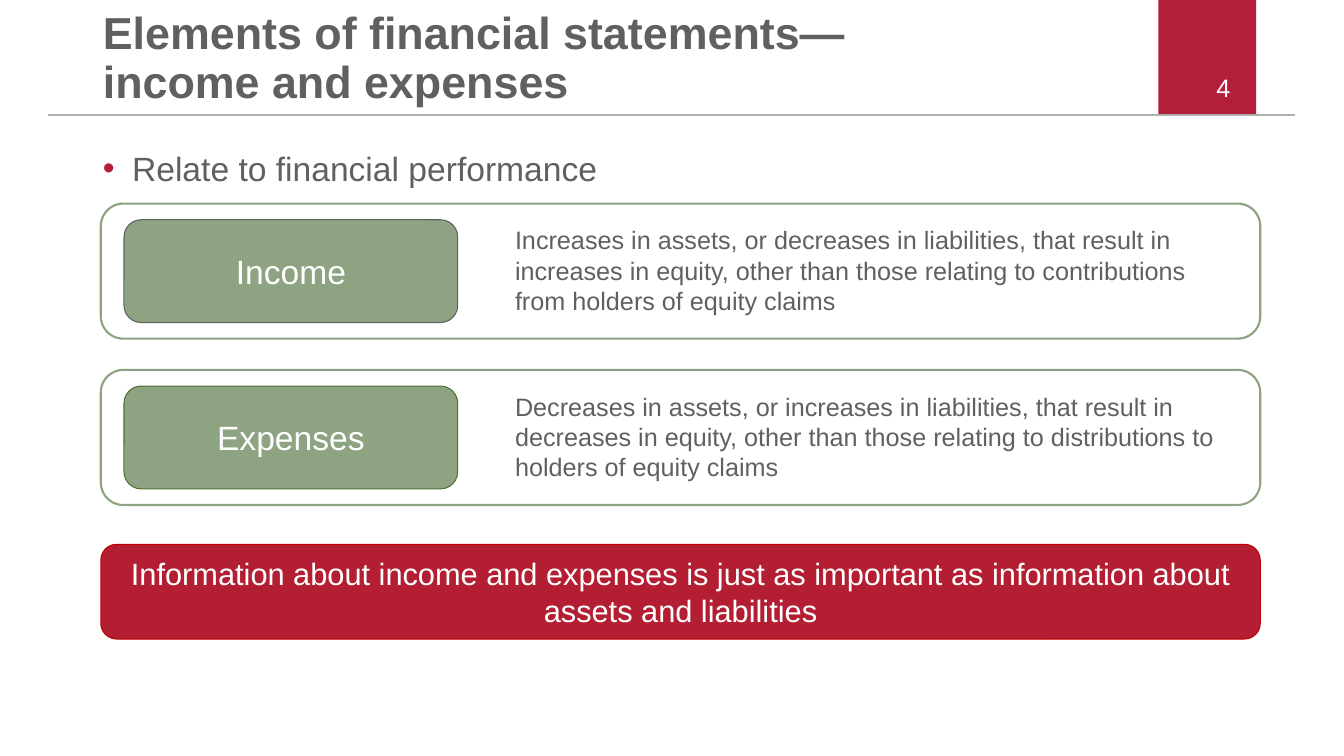
import pptx
import pptx.util
import pptx.dml.color
import pptx.enum.shapes
import pptx.enum.text
from lxml import etree
from pptx.oxml.ns import qn

Inches = pptx.util.Inches
Pt = pptx.util.Pt
RGBColor = pptx.dml.color.RGBColor
SHAPE = pptx.enum.shapes.MSO_SHAPE
ALIGN = pptx.enum.text.PP_ALIGN
ANCHOR = pptx.enum.text.MSO_ANCHOR

WHITE = RGBColor(0xFF, 0xFF, 0xFF)
GREY = RGBColor(0x5F, 0x60, 0x62)
SILVER = RGBColor(0xAF, 0xAF, 0xB0)
CRIMSON = RGBColor(0xB3, 0x1E, 0x3B)
RED = RGBColor(0xB3, 0x1E, 0x32)
EDGE = RGBColor(0xC0, 0x00, 0x00)
SAGE = RGBColor(0x8D, 0xA3, 0x81)
MOSS = RGBColor(0x4F, 0x70, 0x32)

# Label, definition, label outline
TERMS = [
    ("Income",
     "Increases in assets, or decreases in liabilities, that result in "
     "increases in equity, other than those relating to contributions "
     "from holders of equity claims", GREY),
    ("Expenses",
     "Decreases in assets, or increases in liabilities, that result in "
     "decreases in equity, other than those relating to distributions to "
     "holders of equity claims", MOSS),
]
TOP, STEP = 2.02, 1.65


def write(shape, text, size, color, align=ALIGN.LEFT, anchor=ANCHOR.TOP, bold=False):
    frame = shape.text_frame
    frame.word_wrap = True
    frame.vertical_anchor = anchor
    frame.text = text
    for para in frame.paragraphs:
        para.alignment = align
        for run in para.runs:
            run.font.name = "Arial"
            run.font.size = Pt(size)
            run.font.bold = bold
            run.font.color.rgb = color
    return frame


def add_text(slide, box, text, size, color, inset=True, **style):
    shape = slide.shapes.add_textbox(*map(Inches, box))
    frame = write(shape, text, size, color, **style)
    if not inset:
        frame.margin_left = frame.margin_right = 0
        frame.margin_top = frame.margin_bottom = 0
    return frame


def add_box(slide, kind, box, fill=None, line=None, width=0.75):
    shape = slide.shapes.add_shape(kind, *map(Inches, box))
    shape.shadow.inherit = False
    if fill is None:
        shape.fill.background()
    else:
        shape.fill.solid()
        shape.fill.fore_color.rgb = fill
    if line is None:
        shape.line.fill.background()
    else:
        shape.line.color.rgb = line
        shape.line.width = Pt(width)
    return shape


def add_rule(slide, left, right, y):
    rule = slide.shapes.add_connector(
        pptx.enum.shapes.MSO_CONNECTOR.STRAIGHT,
        Inches(left), Inches(y), Inches(right), Inches(y))
    rule.line.color.rgb = SILVER
    rule.line.width = Pt(1.2)
    etree.SubElement(rule._element.spPr, qn("a:effectLst"))


def add_bullet(para, color):
    props = para._p.get_or_add_pPr()
    props.set("marL", str(Inches(0.29)))
    props.set("indent", str(-Inches(0.29)))
    tint = etree.SubElement(props, qn("a:buClr"))
    etree.SubElement(tint, qn("a:srgbClr")).set("val", str(color))
    etree.SubElement(props, qn("a:buFont")).set("typeface", "Arial")
    etree.SubElement(props, qn("a:buChar")).set("char", "•")


def add_term(slide, top, label, text, line):
    add_box(slide, SHAPE.ROUNDED_RECTANGLE, (1, top, 11.5, 1.34), line=SAGE, width=1.5)
    tag = add_box(slide, SHAPE.ROUNDED_RECTANGLE, (1.23, top + 0.16, 3.31, 1.02), SAGE, line)
    write(tag, label, 24, WHITE, ALIGN.CENTER, ANCHOR.MIDDLE)
    add_text(slide, (5.01, top + 0.16, 7.3, 1.01), text, 18, GREY)


def main():
    deck = pptx.Presentation()
    deck.slide_width = Inches(13.33)
    deck.slide_height = Inches(7.5)
    slide = deck.slides.add_slide(deck.slide_layouts[6])

    # Header band with page number
    add_box(slide, SHAPE.RECTANGLE, (11.49, 0, 0.97, 1.14), CRIMSON)
    add_rule(slide, 0.48, 12.84, 1.14)
    add_text(slide, (9.19, 0.67, 3.11, 0.4), "4", 18, WHITE,
             align=ALIGN.RIGHT, anchor=ANCHOR.MIDDLE)

    # Title
    title = add_text(slide, (1.02, 0, 9.88, 1.07),
                     "Elements of financial statements—\vincome and expenses",
                     32, GREY, inset=False, anchor=ANCHOR.BOTTOM, bold=True)
    title.paragraphs[0].line_spacing = 0.9

    # Lead bullet
    lead = add_text(slide, (1.02, 1.47, 11.44, 0.45),
                    "Relate to financial performance", 24, GREY, inset=False)
    add_bullet(lead.paragraphs[0], CRIMSON)

    # Definition rows
    for row, (label, text, line) in enumerate(TERMS):
        add_term(slide, TOP + row * STEP, label, text, line)

    # Closing message
    note = add_box(slide, SHAPE.ROUNDED_RECTANGLE, (1, 5.4, 11.5, 0.94), RED, EDGE)
    write(note, "Information about income and expenses is just as important as "
          "information about assets and liabilities", 22, WHITE,
          ALIGN.CENTER, ANCHOR.MIDDLE)

    deck.save("out.pptx")


if __name__ == "__main__":
    main()
